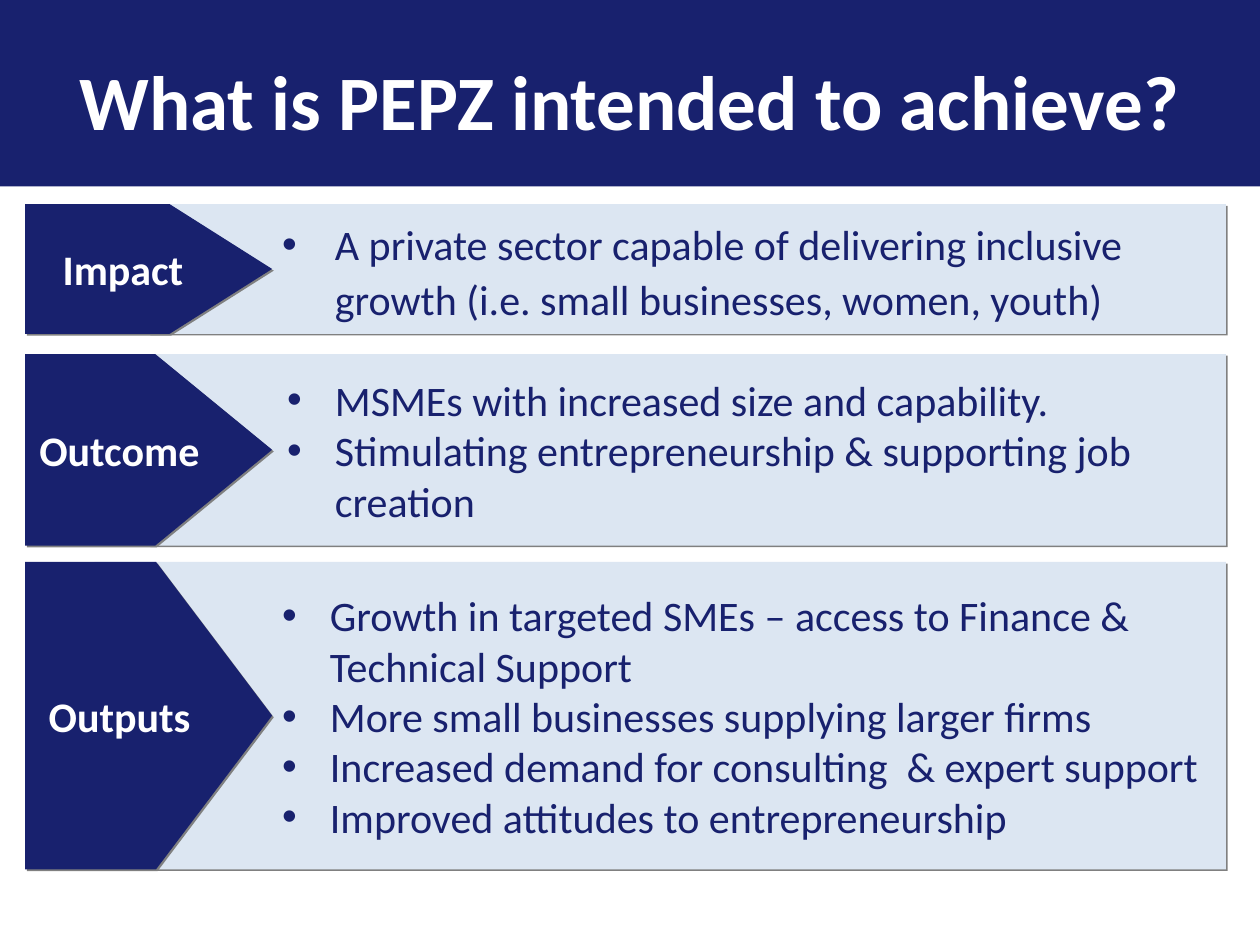
from dataclasses import dataclass

from lxml.etree import SubElement
from pptx import Presentation
from pptx.dml.color import RGBColor
from pptx.enum.shapes import MSO_SHAPE as Preset
from pptx.enum.text import MSO_ANCHOR as Anchor, PP_ALIGN as Align
from pptx.oxml.ns import qn
from pptx.shapes.autoshape import Shape
from pptx.slide import Slide
from pptx.text.text import Font
from pptx.util import Emu, Inches, Pt

NAVY = RGBColor(0x18, 0x21, 0x6E)
PALE = RGBColor(0xDC, 0xE6, 0xF2)
WHITE = RGBColor(0xFF, 0xFF, 0xFF)
GREY = RGBColor(0x80, 0x80, 0x80)

FACE = "Calibri"
BODY_SIZE = 24
PAGE_WIDTH, PAGE_HEIGHT = Inches(10), Inches(7.5)
COLUMNS, ROWS = 100, 75  # square grid cells

ARROW_LEFT, ARROW_WIDTH = 2, 19.6
PANEL_RIGHT = 97.3
PADDING = 1


@dataclass(frozen=True)
class Level:
    name: str
    points: tuple[str, ...]
    top: float
    height: float
    panel_left: float
    indent: float
    hanging: float
    tip: float  # arrow tip as a share of the arrow's shorter side
    spacing: float = 1.0


LEVELS = (
    Level("Impact",
          ("A private sector capable of delivering inclusive growth "
           "(i.e. small businesses, women, youth)",),
          16.2, 10.3, 11.8, 13.8, 4.2, 0.79, 1.1),
    Level("Outcome",
          ("MSMEs with increased size and capability.",
           "Stimulating entrepreneurship & supporting job creation"),
          28.1, 15.2, 11.8, 13.8, 3.8, 0.61),
    Level("Outputs",
          ("Growth in targeted SMEs – access to Finance & Technical Support",
           "More small businesses supplying larger firms",
           "Increased demand for consulting  & expert support",
           "Improved attitudes to entrepreneurship"),
          44.6, 24.4, 7.5, 17.7, 3.8, 0.47),
)


def across(columns: float) -> Emu:
    return Emu(round(PAGE_WIDTH * columns / COLUMNS))


def down(rows: float) -> Emu:
    return Emu(round(PAGE_HEIGHT * rows / ROWS))


def style(font: Font, size: float, color: RGBColor, bold: bool = False) -> None:
    font.name, font.size, font.bold = FACE, Pt(size), bold
    font.color.rgb = color


def add_block(page: Slide, preset: Preset, left: float, top: float,
              width: float, height: float, color: RGBColor) -> Shape:
    block = page.shapes.add_shape(
        preset, across(left), down(top), across(width), down(height))
    block.shadow.inherit = False
    block.fill.solid()
    block.fill.fore_color.rgb = color
    block.line.fill.background()
    frame = block.text_frame
    frame.word_wrap = True
    frame.vertical_anchor = Anchor.MIDDLE
    frame.margin_left = frame.margin_right = across(PADDING)
    frame.margin_top = frame.margin_bottom = down(PADDING)
    return block


def add_shadow(block: Shape) -> None:
    """Cast a hard grey shadow down and to the right."""
    effects = block._element.spPr.find(qn("a:effectLst"))
    shadow = SubElement(effects, qn("a:outerShdw"), blurRad="0",
                        dist=str(Pt(1.4)), dir=str(45 * 60000),
                        algn="ctr", rotWithShape="0")
    SubElement(shadow, qn("a:srgbClr"), val=str(GREY))


def add_panel(page: Slide, level: Level) -> None:
    panel = add_block(page, Preset.RECTANGLE, level.panel_left, level.top,
                      PANEL_RIGHT - level.panel_left, level.height, PALE)
    add_shadow(panel)
    panel.text_frame.text = "\n".join(level.points)
    for para in panel.text_frame.paragraphs:
        para.alignment = Align.LEFT
        para.line_spacing = level.spacing
        properties = para._p.get_or_add_pPr()
        properties.set("marL", str(across(level.indent)))
        properties.set("indent", str(-across(level.hanging)))
        SubElement(properties, qn("a:buFont"), typeface="Arial")
        SubElement(properties, qn("a:buChar"), char="•")
        for span in para.runs:
            style(span.font, BODY_SIZE, NAVY)


def add_arrow(page: Slide, level: Level) -> None:
    arrow = add_block(page, Preset.PENTAGON, ARROW_LEFT, level.top,
                      ARROW_WIDTH, level.height, NAVY)
    arrow.adjustments[0] = level.tip
    add_shadow(arrow)
    para = arrow.text_frame.paragraphs[0]
    para.text = level.name
    para.alignment = Align.CENTER
    style(para.runs[0].font, BODY_SIZE, WHITE, bold=True)


def add_heading(page: Slide, text: str) -> None:
    banner = add_block(page, Preset.RECTANGLE, 0, 0, COLUMNS, 14.8, NAVY)
    title = page.shapes.title
    title._element.addprevious(banner._element)  # banner goes behind the title
    title.left, title.top = across(5), down(2.1)
    title.width, title.height = across(90), down(11.6)
    title.text_frame.text = text
    title.text_frame.vertical_anchor = Anchor.MIDDLE
    para = title.text_frame.paragraphs[0]
    para.alignment = Align.CENTER
    style(para.runs[0].font, 44, WHITE, bold=True)


def main() -> None:
    deck = Presentation()
    deck.slide_width, deck.slide_height = PAGE_WIDTH, PAGE_HEIGHT
    page = deck.slides.add_slide(deck.slide_layouts.get_by_name("Title Only"))
    add_heading(page, "What is PEPZ intended to achieve?")
    for draw in (add_panel, add_arrow):
        for level in LEVELS:
            draw(page, level)
    deck.save("out.pptx")


if __name__ == "__main__":
    main()
